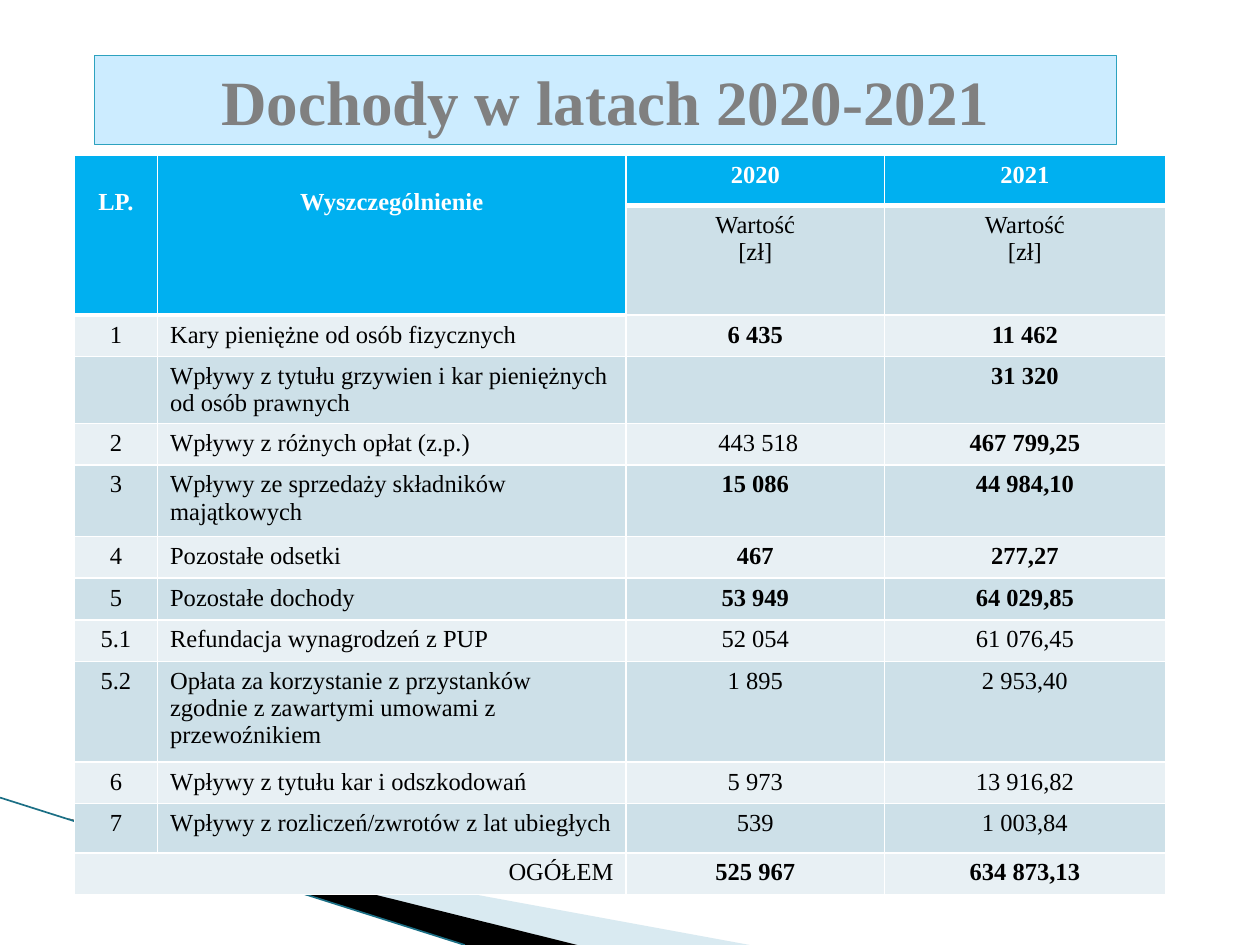
from lxml import etree
from pptx import Presentation
from pptx import util as u
from pptx.dml import color
from pptx.enum import shapes, text
from pptx.oxml import ns

FONT = "Times New Roman"
WIDTH, HEIGHT = u.Inches(10), u.Inches(7.5)
HEADER, DARK_BAND, LIGHT_BAND = "00B0F0", "CDE0E8", "E8F0F4"
CENTER, LEFT, RIGHT = text.PP_ALIGN.CENTER, text.PP_ALIGN.LEFT, text.PP_ALIGN.RIGHT
COLUMNS = [0.66, 3.72, 2.05, 2.23]
ROWS = [0.4, 0.87, 0.33, 0.52, 0.33, 0.57, 0.33, 0.33, 0.33, 0.8, 0.33, 0.39, 0.33]
BOLD_ROWS = {2, 3, 5, 6, 7, 12}
BOLD_CELLS = {(4, 3)}
DATA = [
    ["LP.", "Wyszczególnienie", "2020", "2021"],
    ["", "", "Wartość\n[zł]", "Wartość\n[zł]"],
    ["1", "Kary pieniężne od osób fizycznych", "6 435", "11 462"],
    ["", "Wpływy z tytułu grzywien i kar pieniężnych od osób prawnych", "", "31 320"],
    ["2", "Wpływy z różnych opłat (z.p.)", " 443 518", "467 799,25"],
    ["3", "Wpływy ze sprzedaży składników majątkowych", "15 086", "44 984,10"],
    ["4", "Pozostałe odsetki", "467", "277,27"],
    ["5", "Pozostałe dochody", "53 949", "64 029,85"],
    ["5.1", "Refundacja wynagrodzeń z PUP", "52 054", "61 076,45"],
    ["5.2", "Opłata za korzystanie z przystanków zgodnie z zawartymi umowami z przewoźnikiem",
     "1 895", "2 953,40"],
    ["6", "Wpływy z tytułu kar i odszkodowań", "5 973", "13 916,82"],
    ["7", "Wpływy z rozliczeń/zwrotów z lat ubiegłych", "539", "1 003,84"],
    ["OGÓŁEM", "", "525 967", "634 873,13"],
]


def rgb(value):
    """Turn a hex string into a colour."""
    return color.RGBColor.from_string(value)


def fill_shape(shape, value):
    """Give a shape or cell a solid fill."""
    shape.fill.solid()
    shape.fill.fore_color.rgb = rgb(value)


def format_paragraph(paragraph, size, value, bold, alignment):
    """Set the font and alignment of a paragraph."""
    paragraph.alignment = alignment
    font = paragraph.font
    font.name, font.size, font.bold = FONT, u.Pt(size), bold
    font.color.rgb = rgb(value)


def set_border(cell, side, width):
    """Draw one white border of a cell."""
    properties = cell._tc.get_or_add_tcPr()
    line = etree.SubElement(properties, ns.qn(f"a:ln{side}"), w=str(u.Pt(width)))
    solid = etree.SubElement(line, ns.qn("a:solidFill"))
    etree.SubElement(solid, ns.qn("a:srgbClr"), val="FFFFFF")


def add_wedge(slide, box, points, value, alpha=None):
    """Fill a polygon whose points are shares of the box."""
    left, top, width, height = box
    places = [(int(left + x * width), int(top + y * height)) for x, y in points]
    builder = slide.shapes.build_freeform(*places[0])
    builder.add_line_segments(places[1:])
    shape = builder.convert_to_shape()
    shape.shadow.inherit = False
    fill_shape(shape, value)
    shape.line.fill.background()
    if alpha:
        solid = shape._element.spPr.find(ns.qn("a:solidFill"))
        etree.SubElement(solid[0], ns.qn("a:alpha"), val=str(alpha * 1000))


def add_corner(slide, box):
    """Place the wedges and the line in the lower left corner."""
    left, top, width, height = box
    add_wedge(slide, box, [(0.09, 0.15), (1, 1), (0.77, 1)], "A0CBDC", 40)
    add_wedge(slide, box, [(0.09, 0.14), (0.77, 1), (0.62, 1)], "000000")
    line = slide.shapes.add_connector(
        shapes.MSO_CONNECTOR.STRAIGHT, left, top, left + int(0.62 * width), top + height)
    line.line.color.rgb = rgb("1B6F85")
    line.line.width = u.Pt(0.95)
    etree.SubElement(line._element.spPr, ns.qn("a:effectLst"))


def add_title(slide, box):
    """Move and format the title placeholder."""
    title = slide.shapes.title
    title.left, title.top, title.width, title.height = box
    fill_shape(title, "CCECFF")
    title.line.color.rgb = rgb("2DA2BF")
    title.line.width = u.Pt(0.75)
    frame = title.text_frame
    frame.text = "Dochody w latach 2020-2021"
    frame.vertical_anchor = text.MSO_ANCHOR.MIDDLE
    frame.auto_size = text.MSO_AUTO_SIZE.NONE
    format_paragraph(frame.paragraphs[0], 36, "808080", True, CENTER)


def format_cell(cell, row, column):
    """Style one cell by its place in the table."""
    is_header = row == 0 or (row == 1 and column < 2)
    is_bold = is_header or (column > 1 and row in BOLD_ROWS) or (row, column) in BOLD_CELLS
    is_total = row == len(ROWS) - 1
    alignment = LEFT if column == 1 and not is_header else CENTER
    if is_total and column < 2:
        alignment = RIGHT
    for paragraph in cell.text_frame.paragraphs:
        format_paragraph(paragraph, 14, "FFFFFF" if is_header else "000000", is_bold, alignment)
    cell.margin_top = u.Inches(0.27 if row == 0 and column < 2 else 0.05)
    for side in "LRTB":
        set_border(cell, side, 3 if is_header and side == "B" else 1)
    fill_shape(cell, HEADER if is_header else DARK_BAND if row % 2 else LIGHT_BAND)


def add_income_table(slide, box):
    """Build the income table with merged headings and total."""
    table = slide.shapes.add_table(len(ROWS), len(COLUMNS), *box).table
    for column, share in zip(table.columns, COLUMNS):
        column.width = int(box[2] * share / sum(COLUMNS))
    for row, share in zip(table.rows, ROWS):
        row.height = int(box[3] * share / sum(ROWS))
    for row, values in enumerate(DATA):
        for column, value in enumerate(values):
            cell = table.cell(row, column)
            cell.text = value
            format_cell(cell, row, column)
    for column in range(2):
        table.cell(0, column).merge(table.cell(1, column))
    last = len(ROWS) - 1
    table.cell(last, 0).merge(table.cell(last, 1))


def main():
    """Build and save the slide."""
    presentation = Presentation()
    presentation.slide_width, presentation.slide_height = WIDTH, HEIGHT
    slide = presentation.slides.add_slide(presentation.slide_layouts[5])
    add_corner(slide, (0, u.Inches(6.33), u.Inches(5.95), u.Inches(1.17)))
    add_title(slide, (u.Inches(0.75), u.Inches(0.44), u.Inches(8.11), u.Inches(0.71)))
    add_income_table(
        slide, (u.Inches(0.59), u.Inches(1.23), u.Inches(sum(COLUMNS)), u.Inches(sum(ROWS))))
    presentation.save("out.pptx")


if __name__ == "__main__":
    main()
